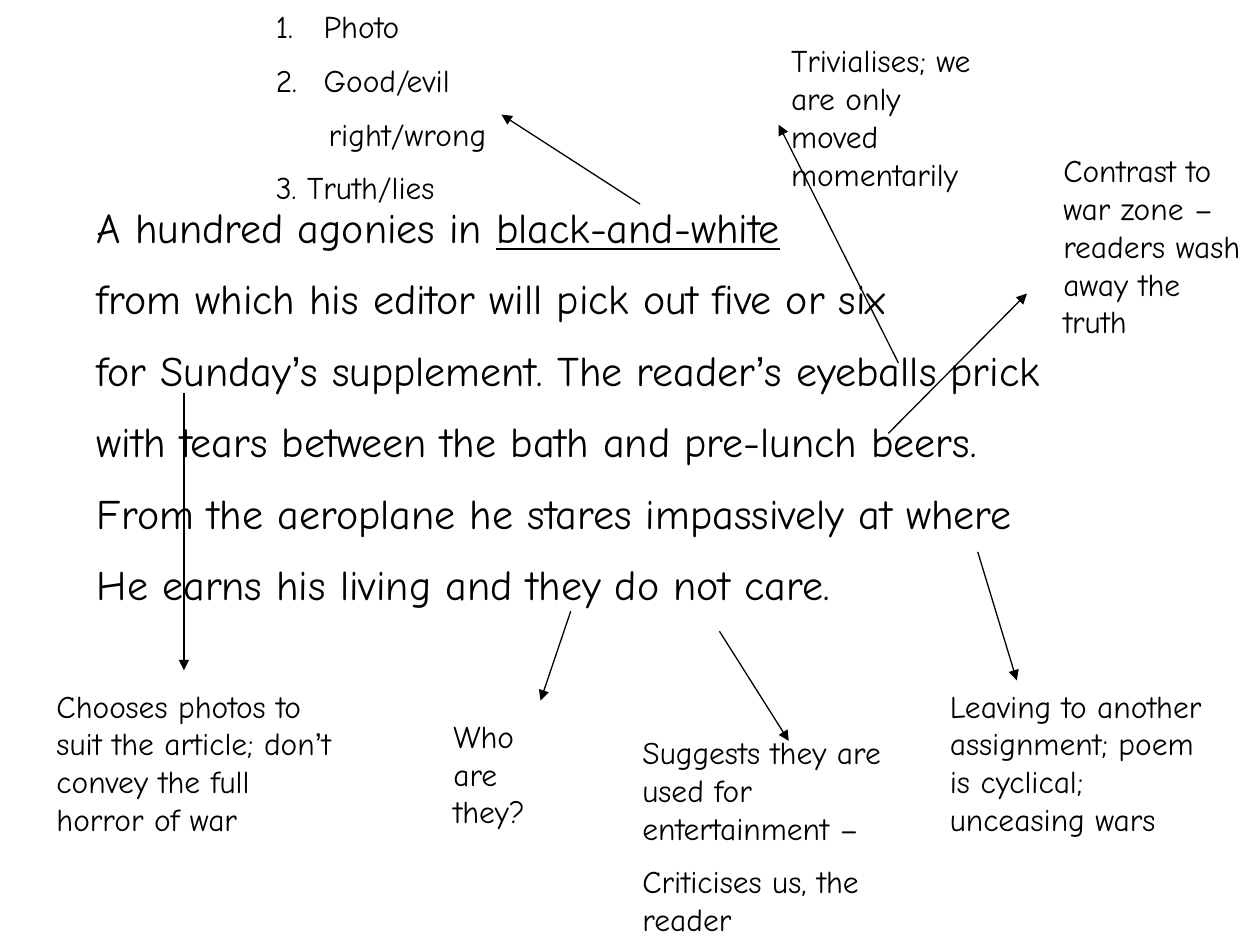
from lxml import etree
from pptx import Presentation
from pptx.dml.color import RGBColor
from pptx.enum.shapes import MSO_CONNECTOR
from pptx.enum.text import MSO_AUTO_SIZE
from pptx.oxml.ns import qn
from pptx.util import Inches, Pt

STRAIGHT = MSO_CONNECTOR.STRAIGHT
GROW = MSO_AUTO_SIZE.SHAPE_TO_FIT_TEXT
BLACK = RGBColor(0, 0, 0)
FONT, APOSTROPHE_FONT = "Comic Neue", "Arial"
POEM_SIZE, NOTE_SIZE = 24, 18
UNDERLINED = "black-and-white"

POEM_BOX = (0.67, 1.55, 8.82, 3.53)
POEM = [
    "A hundred agonies in black-and-white",
    "from which his editor will pick out five or six",
    "for Sunday’s supplement. The reader’s eyeballs prick",
    "with tears between the bath and pre-lunch beers.",
    "From the aeroplane he stares impassively at where",
    "He earns his living and they do not care.",
]

# Each note: box, paragraphs, arrow from the poem, arrow to the note
NOTES = [
    ((2.09, 0.01, 3.31, 1.77),
     ["Photo", "Good/evil", "right/wrong", "3. Truth/lies"],
     (5.08, 1.62), (3.98, 0.91)),
    ((0.35, 5.4, 2.44, 1.3),
     ["Chooses photos to suit the article; don’t convey the full horror of war"],
     (1.46, 3.12), (1.46, 5.32)),
    ((6.18, 0.28, 1.73, 1.3),
     ["Trivialises; we are only moved momentarily"],
     (7.13, 2.88), (6.18, 0.99)),
    ((3.5, 5.64, 1.1, 1),
     ["Who are they?"],
     (4.53, 4.85), (4.29, 5.56)),
    ((5, 5.77, 2.28, 1.77),
     ["Suggests they are used for entertainment –", "Criticises us, the reader"],
     (5.71, 5.01), (6.26, 5.88)),
    ((8.34, 1.15, 1.65, 1.62),
     ["Contrast to war zone – readers wash away the truth"],
     (7.05, 3.44), (8.15, 2.33)),
    ((7.44, 5.4, 2.36, 1.31),
     ["Leaving to another assignment; poem is cyclical; unceasing wars"],
     (7.76, 4.38), (8.07, 5.4)),
]
NUMBERED = ("Photo", "Good/evil")
INDENTS = {"Photo": (0.38, -0.38), "Good/evil": (0.38, -0.38),
           "right/wrong": (0.42, 0)}


def split_runs(line):
    """Separate the apostrophes and the underlined phrase from the rest."""
    for part in ("’", UNDERLINED):
        line = line.replace(part, f"|{part}|")
    return [piece for piece in line.split("|") if piece]


def indent(paragraph, line):
    left, first = INDENTS[line]
    properties = paragraph._p.get_or_add_pPr()
    properties.set("marL", str(Inches(left)))
    properties.set("indent", str(Inches(first)))
    if line in NUMBERED:
        number = etree.SubElement(properties, qn("a:buAutoNum"))
        number.set("type", "arabicPeriod")


def add_text(slide, box, lines, size):
    frame = slide.shapes.add_textbox(*map(Inches, box)).text_frame
    frame.word_wrap = True
    frame.auto_size = GROW
    for i, line in enumerate(lines):
        paragraph = frame.add_paragraph() if i else frame.paragraphs[0]
        paragraph.space_before = Pt(size / 2)
        if line in INDENTS:
            indent(paragraph, line)
        for piece in split_runs(line):
            run = paragraph.add_run()
            run.text = piece
            run.font.name = APOSTROPHE_FONT if piece == "’" else FONT
            run.font.size = Pt(size)
            run.font.color.rgb = BLACK
            if piece == UNDERLINED:
                run.font.underline = True


def add_arrow(slide, start, end):
    arrow = slide.shapes.add_connector(STRAIGHT, *map(Inches, start + end))
    arrow.line.color.rgb = BLACK
    arrow.line.width = Pt(0.75)
    head = etree.SubElement(arrow.line._get_or_add_ln(), qn("a:tailEnd"))
    head.set("type", "triangle")
    etree.SubElement(arrow._element.spPr, qn("a:effectLst"))


def main():
    deck = Presentation()
    deck.slide_width, deck.slide_height = Inches(10), Inches(7.5)
    slide = deck.slides.add_slide(deck.slide_layouts[6])
    add_text(slide, POEM_BOX, POEM, POEM_SIZE)
    for box, lines, start, end in NOTES:
        add_arrow(slide, start, end)
        add_text(slide, box, lines, NOTE_SIZE)
    deck.save("out.pptx")


if __name__ == "__main__":
    main()
